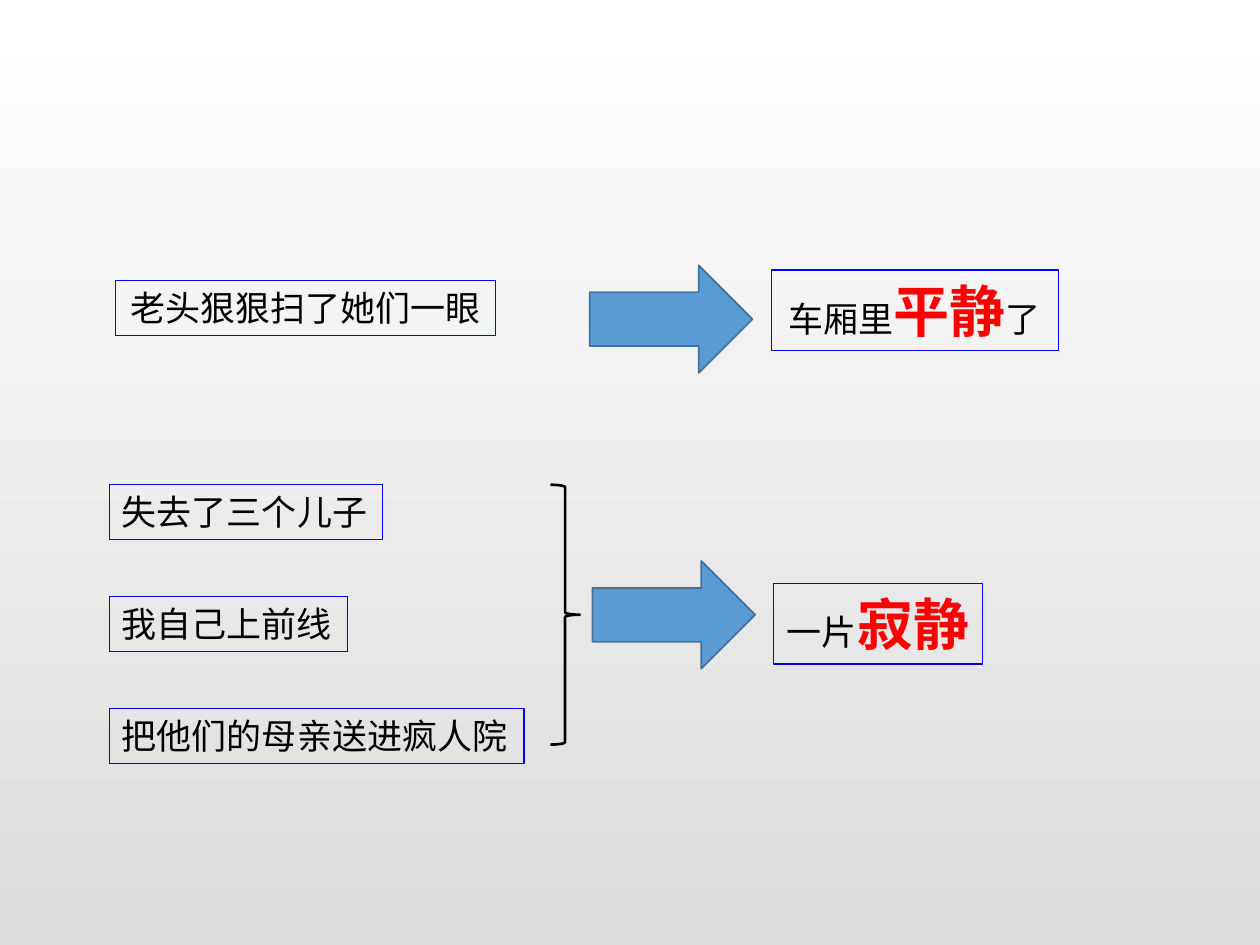
import pptx
import pptx.util
import pptx.dml.color
import pptx.enum.shapes
import pptx.enum.text
import pptx.oxml.ns
import lxml.etree

Pt = pptx.util.Pt
SHAPE = pptx.enum.shapes.MSO_SHAPE
ALIGN = pptx.enum.text.PP_ALIGN
FONT = "Noto Sans CJK SC"
PLAIN = {"size": Pt(20), "bold": False, "name": FONT}
STRONG = {"size": Pt(32), "bold": True, "name": FONT}


def rgb(value):
    """Return the colour for a hex string."""
    return pptx.dml.color.RGBColor.from_string(value)


def set_background(s, top, bottom):
    """Fill the slide with a gradient running from top to bottom."""
    fill = s.background.fill
    fill.gradient()
    fill.gradient_angle = 270
    for stop, position, color in zip(fill.gradient_stops, (0, 1), (top, bottom)):
        stop.position = position
        stop.color.rgb = rgb(color)


def set_line(sp, color, width):
    """Set the outline colour and width of a shape."""
    sp.line.color.rgb = rgb(color)
    sp.line.width = Pt(width)


def add_run(p, text, color, font):
    """Add a formatted run, with its East Asian typeface, to a paragraph."""
    r = p.add_run()
    r.text = text
    for key, value in font.items():
        setattr(r.font, key, value)
    r.font.color.rgb = rgb(color)
    ea = lxml.etree.SubElement(r.font._element, pptx.oxml.ns.qn("a:ea"))
    ea.set("typeface", FONT)


def add_label(s, box, parts, align=ALIGN.CENTER):
    """Add a blue-framed label whose parts are (text, emphasised) pairs."""
    sp = s.shapes.add_textbox(*map(Pt, box))
    set_line(sp, "0000FF", 0.75)
    tf = sp.text_frame
    tf.word_wrap = False
    tf.auto_size = pptx.enum.text.MSO_AUTO_SIZE.SHAPE_TO_FIT_TEXT
    p = tf.paragraphs[0]
    p.alignment = align
    for text, strong in parts:
        add_run(p, text, "FF0000" if strong else "000000", STRONG if strong else PLAIN)


def add_figure(s, kind, box, line, width, fill=None):
    """Add a preset shape with an optional fill."""
    sp = s.shapes.add_shape(kind, *map(Pt, box))
    sp.shadow.inherit = False
    set_line(sp, line, width)
    if fill:
        sp.fill.solid()
        sp.fill.fore_color.rgb = rgb(fill)
    else:
        sp.fill.background()


def main():
    """Build the slide and save it."""
    prs = pptx.Presentation()
    prs.slide_width, prs.slide_height = Pt(720), Pt(540)
    s = prs.slides.add_slide(prs.slide_layouts[6])
    set_background(s, "FFFFFF", "DCDCDC")

    add_label(s, (66, 160.3, 217, 31.5), [("老头狠狠扫了她们一眼", False)])
    add_label(s, (440.7, 154.2, 164, 46),
              [("车厢里", False), ("平静", True), ("了", False)])

    causes = [("失去了三个儿子", 156), ("我自己上前线", 136), ("把他们的母亲送进疯人院", 237)]
    for i, (text, width) in enumerate(causes):
        add_label(s, (62.5, 277 + 64 * i, width, 31.5), [(text, False)], ALIGN.LEFT)

    for left, top in ((337, 151.6), (338.5, 320.6)):
        add_figure(s, SHAPE.RIGHT_ARROW, (left, top, 93, 61.5), "43739E", 1, "5B9BD5")
    add_figure(s, SHAPE.RIGHT_BRACE, (314.5, 277, 16.8, 148.5), "000000", 1.5)
    add_label(s, (442, 333.5, 119.5, 46), [("一片", False), ("寂静", True)])

    prs.save("out.pptx")


if __name__ == "__main__":
    main()
